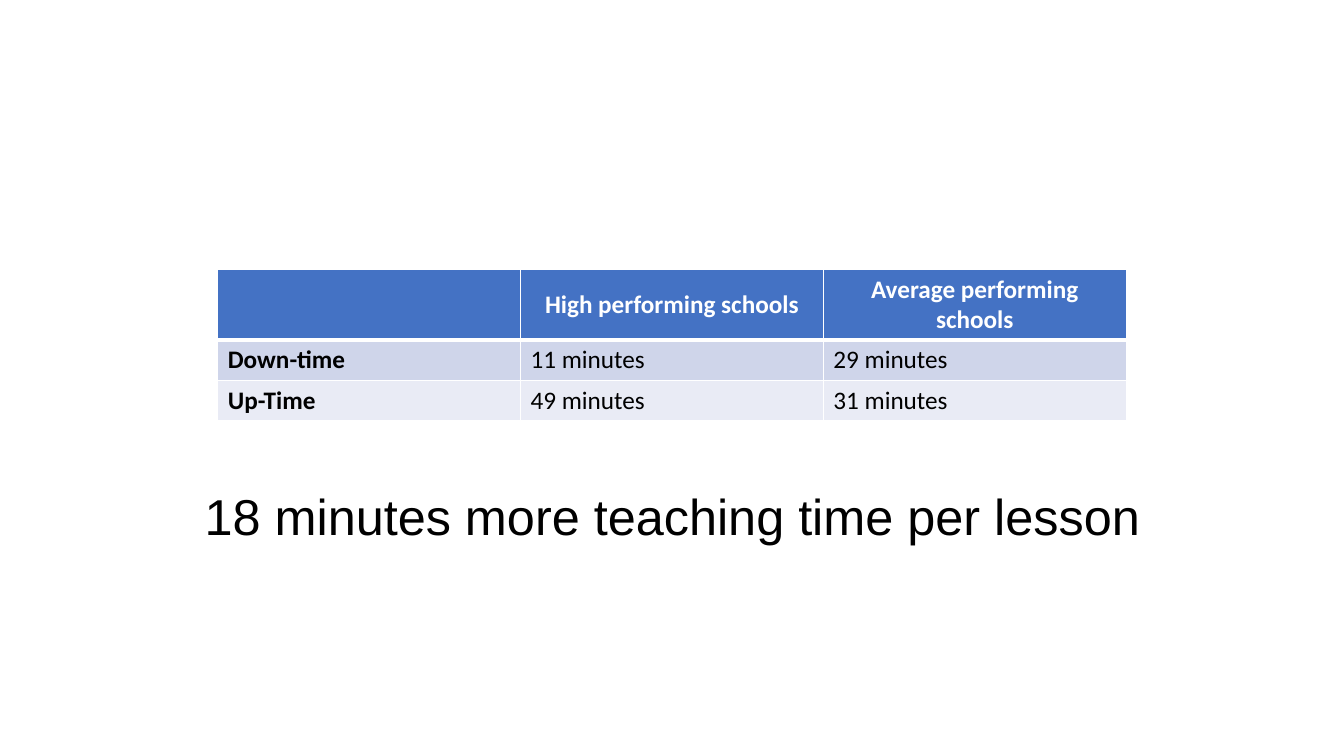
from lxml.etree import SubElement
from pptx import Presentation
from pptx.dml.color import RGBColor
from pptx.enum.text import MSO_ANCHOR, PP_ALIGN
from pptx.oxml.ns import qn
from pptx.util import Inches, Pt

ROWS = [
    ("", "High performing schools", "Average performing schools"),
    ("Down-time", "11 minutes", "29 minutes"),
    ("Up-Time", "49 minutes", "31 minutes"),
]
FILLS = ["4472C4", "CFD5EA", "E9EBF5"]
HEAD, ROW = 0.7, 0.4


def color(code):
    return RGBColor.from_string(code)


def style(para, font, size, code, bold=False):
    for run in para.runs:
        run.font.name = font
        run.font.size = Pt(size)
        run.font.bold = bold
        run.font.color.rgb = color(code)


def border(cell, widths, code):
    props = cell._tc.get_or_add_tcPr()
    for side, width in zip("LRTB", widths):
        line = SubElement(props, qn(f"a:ln{side}"), w=str(Pt(width)))
        fill = SubElement(line, qn("a:solidFill"))
        SubElement(fill, qn("a:srgbClr"), val=code)


# Table of lesson time
def add_times(slide, left, top, width):
    height = HEAD + ROW * (len(ROWS) - 1)
    table = slide.shapes.add_table(
        len(ROWS), len(ROWS[0]),
        Inches(left), Inches(top), Inches(width), Inches(height)).table
    for col in table.columns:
        col.width = Inches(width / len(ROWS[0]))
    for r, texts in enumerate(ROWS):
        head = r == 0
        table.rows[r].height = Inches(HEAD if head else ROW)
        for c, text in enumerate(texts):
            cell = table.cell(r, c)
            border(cell, (1, 1, 3 if r == 1 else 1, 3 if head else 1), "FFFFFF")
            cell.fill.solid()
            cell.fill.fore_color.rgb = color(FILLS[r])
            cell.text_frame.text = text
            para = cell.text_frame.paragraphs[0]
            style(para, "Calibri", 18, "FFFFFF" if head else "000000",
                  head or c == 0)
            if head:
                cell.vertical_anchor = MSO_ANCHOR.MIDDLE
                para.alignment = PP_ALIGN.CENTER


# Closing message
def add_claim(slide, left, top, width, height):
    box = slide.shapes.add_textbox(
        Inches(left), Inches(top), Inches(width), Inches(height))
    frame = box.text_frame
    frame.word_wrap = True
    frame.vertical_anchor = MSO_ANCHOR.MIDDLE
    frame.text = "18 minutes more teaching time per lesson"
    para = frame.paragraphs[0]
    para.alignment = PP_ALIGN.CENTER
    style(para, "Arial", 36, "000000")


def main():
    deck = Presentation()
    deck.slide_width, deck.slide_height = Inches(13.33), Inches(7.5)
    slide = deck.slides.add_slide(deck.slide_layouts[6])
    add_claim(slide, 0.92, 4.71, 11.5, 0.8)
    add_times(slide, 2.16, 2.67, 9.01)
    deck.save("out.pptx")


if __name__ == "__main__":
    main()
